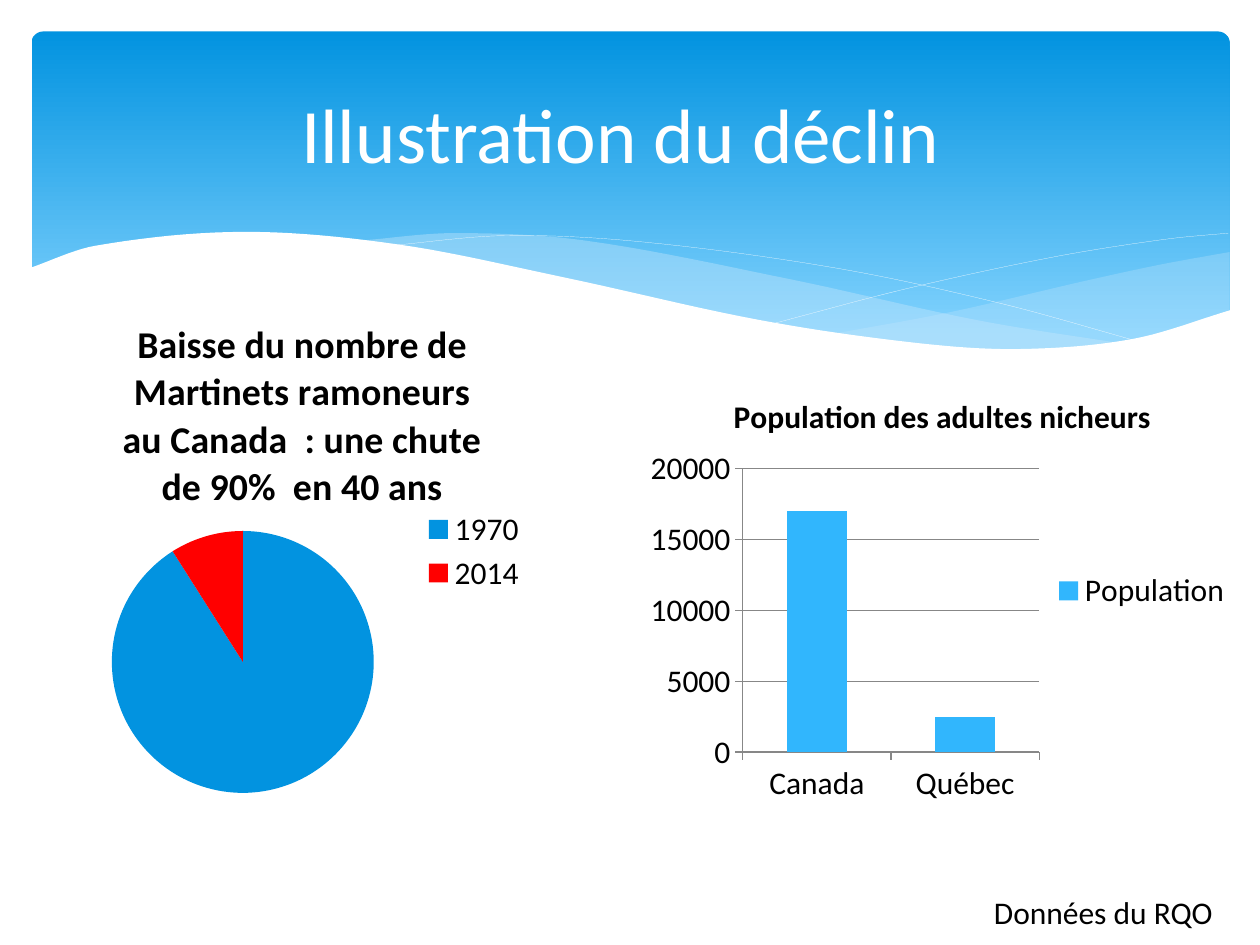
from lxml.etree import SubElement
from pptx import Presentation
from pptx.chart.data import CategoryChartData
from pptx.dml.color import RGBColor as RGB
from pptx.enum.chart import XL_CHART_TYPE as CT, XL_LEGEND_POSITION as LP, XL_TICK_MARK as TM
from pptx.enum.shapes import MSO_SHAPE as SHAPE
from pptx.enum.text import MSO_ANCHOR as ANCHOR, PP_ALIGN as ALIGN
from pptx.oxml import parse_xml
from pptx.oxml.ns import nsdecls, qn
from pptx.util import Inches, Pt

COLORS = {"deep": "0293E0", "sky": "83D3FE", "mist": "C6E7FC", "bar": "31B6FD",
          "red": "FF0000", "white": "FFFFFF", "black": "000000", "grid": "878787"}
C = {name: RGB.from_string(value) for name, value in COLORS.items()}
FONT = "Calibri"
STEPS = 10


def smooth(knots):
    last = len(knots) - 1
    slopes = []
    for i in range(len(knots)):
        (xa, ya), (xb, yb) = knots[max(i - 1, 0)], knots[min(i + 1, last)]
        slopes.append((yb - ya) / (xb - xa))
    points = [knots[0]]
    for (x0, y0), (x1, y1), m0, m1 in zip(knots, knots[1:], slopes, slopes[1:]):
        dx, dy = x1 - x0, y1 - y0
        for step in range(1, STEPS + 1):
            t = step / STEPS
            ease = t * t * (3 - 2 * t)
            bend = t * (1 - t) * ((1 - t) * m0 - t * m1)
            points.append((x0 + t * dx, y0 + ease * dy + bend * dx))
    return points


def set_layout(element, box, inner=False):
    for old in element.findall(qn("c:layout")):
        element.remove(old)
    target = '<c:layoutTarget val="inner"/>' if inner else ""
    sizes = "".join(f'<c:{key} val="{value}"/>' for key, value in zip("xywh", box))
    layout = parse_xml(
        f'<c:layout {nsdecls("c")}><c:manualLayout>{target}<c:xMode val="edge"/>'
        f'<c:yMode val="edge"/>{sizes}</c:manualLayout></c:layout>')
    element.insert(0 if inner else 1, layout)


prs = Presentation()
prs.slide_width, prs.slide_height = Inches(10), Inches(7.5)
s = prs.slides.add_slide(prs.slide_layouts[6])

banner = s.shapes.add_shape(SHAPE.ROUNDED_RECTANGLE, Inches(0.25), Inches(0.25),
                            Inches(9.51), Inches(2.7))
banner.adjustments[0] = 0.034
banner.shadow.inherit = False
banner.line.fill.background()
banner.fill.gradient()
banner.fill.gradient_angle = 270
for stop, color, position in zip(banner.fill.gradient_stops, ("deep", "sky"), (0, 0.9)):
    stop.color.rgb, stop.position = C[color], position

right_top = [(6.61, 2.65), (7.53, 2.48), (8.61, 2.23), (9.21, 2.1), (9.76, 2)]
right_bottom = [(6.61, 2.65), (7.45, 2.75), (8.14, 2.78), (8.97, 2.7), (9.76, 2.47)]
middle_top = [(2.86, 1.91), (3.61, 1.85), (4.65, 1.91), (6.29, 2.22), (7.75, 2.54),
              (8.93, 2.73)]
middle_bottom = [(2.86, 1.91), (4.49, 2.22), (6.01, 2.55), (7.22, 2.74), (8.18, 2.78),
                 (8.93, 2.73)]
white_top = [(0.23, 2.13), (0.76, 1.95), (1.93, 1.84), (3.16, 1.94), (4.47, 2.2),
             (6.03, 2.54), (7.26, 2.72), (8.09, 2.77), (8.99, 2.69), (9.77, 2.46)]
white_bottom = [(0.23, 3.29), (9.77, 3.29)]
falling_line = [(3.09, 1.95), (4.01, 1.87), (5.1, 1.92), (6.65, 2.13), (7.95, 2.41),
                (9.07, 2.72)]
rising_line = [(6.13, 2.57), (7.2, 2.29), (8.36, 2.04), (9.24, 1.9), (9.75, 1.85)]

waves = [(right_top, right_bottom, "mist", 29),
         (middle_top, middle_bottom, "mist", 40),
         (falling_line, None, "white", 100),
         (rising_line, None, "white", 100),
         (white_top, white_bottom, "white", 100)]
for top, bottom, color, opacity in waves:
    outline = smooth(top)
    if bottom:
        outline += reversed(smooth(bottom))
    points = [(Inches(x), Inches(y)) for x, y in outline]
    fb = s.shapes.build_freeform(*points[0])
    fb.add_line_segments(points[1:], close=bool(bottom))
    sp = fb.convert_to_shape()
    sp.shadow.inherit = False
    if bottom:
        sp.fill.solid()
        sp.fill.fore_color.rgb = C[color]
        sp.line.fill.background()
        clr = sp._element.spPr.find(qn("a:solidFill"))[0]
        SubElement(clr, qn("a:alpha")).set("val", str(opacity * 1000))
    else:
        sp.fill.background()
        sp.line.color.rgb = C[color]
        sp.line.width = Pt(0.1)

charts = [
    dict(kind=CT.PIE, box=(0.51, 2.33, 3.78, 4.09), plot_box=(0.1, 0.46, 0.55, 0.51),
         title="Baisse du nombre de Martinets ramoneurs au Canada  : "
               "une chute de 90%  en 40 ans",
         title_size=21.6, series="Series 1", values={"1970": 91, "2014": 9}),
    dict(kind=CT.COLUMN_STACKED, box=(5.08, 2.96, 4.8, 3.46),
         plot_box=(0.17, 0.22, 0.49, 0.65), title="Population des adultes nicheurs",
         title_size=18, series="Population", values={"Canada": 17000, "Québec": 2500})]
for spot in charts:
    data = CategoryChartData()
    data.categories = list(spot["values"])
    data.add_series(spot["series"], list(spot["values"].values()))
    box = [Inches(v) for v in spot["box"]]
    chart = s.shapes.add_chart(spot["kind"], *box, data).chart
    chart.font.name, chart.font.size, chart.font.color.rgb = FONT, Pt(18), C["black"]
    chart.has_title = True
    r = chart.chart_title.text_frame.paragraphs[0].add_run()
    r.text = spot["title"]
    r.font.name, r.font.size, r.font.bold = FONT, Pt(spot["title_size"]), True
    r.font.color.rgb = C["black"]
    chart.has_legend = True
    chart.legend.position = LP.RIGHT
    chart.legend.include_in_layout = False
    set_layout(chart._chartSpace.chart.plotArea, spot["plot_box"], inner=True)
    plot = chart.plots[0]
    series = plot.series[0]
    is_pie = spot["kind"] == CT.PIE
    plot.vary_by_categories = is_pie
    if is_pie:
        set_layout(chart.legend._element, (0.75, 0.41, 0.22, 0.18))
        painted = [(series.points[0], "deep"), (series.points[1], "red")]
    else:
        painted = [(series, "bar")]
        plot.gap_width, plot.overlap = 150, 100
        value_axis = chart.value_axis
        value_axis.minimum_scale, value_axis.maximum_scale = 0, 20000
        value_axis.major_unit = 5000
        value_axis.has_major_gridlines = True
        value_axis.major_gridlines.format.line.color.rgb = C["grid"]
        for axis in (chart.category_axis, value_axis):
            axis.major_tick_mark = TM.OUTSIDE
            axis.format.line.color.rgb = C["grid"]
    for part, color in painted:
        part.format.fill.solid()
        part.format.fill.fore_color.rgb = C[color]

texts = [("Illustration du déclin", 44, "white", (0.5, 0.37, 8.85, 1.37),
          ALIGN.CENTER, ANCHOR.MIDDLE),
         ("Données du RQO", 18, "black", (7.79, 7.04, 2.2, 0.4), ALIGN.LEFT, ANCHOR.TOP)]
for text, size, color, box, align, anchor in texts:
    tf = s.shapes.add_textbox(*[Inches(v) for v in box]).text_frame
    tf.word_wrap = True
    tf.vertical_anchor = anchor
    p = tf.paragraphs[0]
    p.alignment = align
    r = p.add_run()
    r.text = text
    r.font.name, r.font.size, r.font.color.rgb = FONT, Pt(size), C[color]

prs.save("out.pptx")
